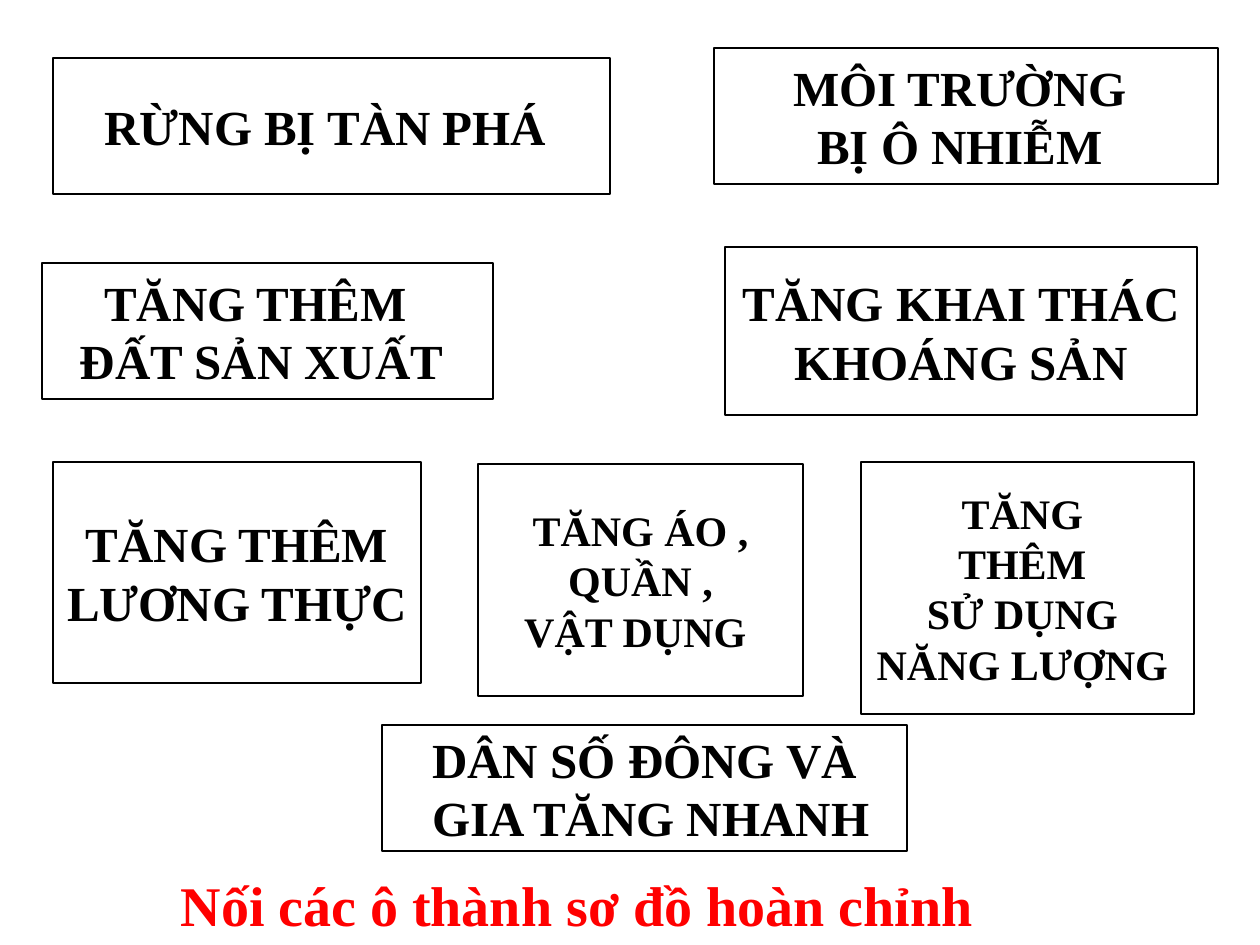
from pptx import Presentation
from pptx.dml.color import RGBColor
from pptx.enum.shapes import MSO_SHAPE as Shape
from pptx.enum.text import MSO_ANCHOR as Anchor, MSO_AUTO_SIZE as Auto, PP_ALIGN as Align
from pptx.util import Pt

BLACK = RGBColor(0, 0, 0)
RED = RGBColor(255, 0, 0)
FONT = "Times New Roman"
PAD = 13  # side inset of a box

# left, top, width, height in px; text size; extra right inset in px; lines
BOXES = [
    (53, 462, 368, 221, 28, 0, ["TĂNG THÊM", " LƯƠNG THỰC "]),
    (478, 464, 325, 232, 24, 0, ["TĂNG ÁO ,", "QUẦN ,", "VẬT DỤNG "]),
    (861, 462, 333, 252, 24, 0, ["TĂNG ", "THÊM ", "SỬ DỤNG ", "NĂNG LƯỢNG "]),
    (382, 725, 525, 126, 28, 0, ["DÂN SỐ ĐÔNG VÀ", " GIA TĂNG NHANH"]),
    (42, 263, 451, 136, 28, 12, ["TĂNG THÊM ", "ĐẤT SẢN XUẤT"]),
    (725, 247, 472, 168, 28, 0, ["TĂNG KHAI THÁC", " KHOÁNG SẢN "]),
    (53, 58, 557, 136, 28, 0, ["RỪNG BỊ TÀN PHÁ "]),
    (714, 48, 504, 136, 28, 0, ["MÔI TRƯỜNG ", "BỊ Ô NHIỄM "]),
]
TASK = (10, 864, 1134, 81, 32, "Nối các ô thành sơ đồ hoàn chỉnh")


def px(n):
    return round(n * 914400 / 126)


def write(frame, text, size, color):
    frame.text = text
    for para in frame.paragraphs:
        para.alignment = Align.CENTER
        for run in para.runs:
            font = run.font
            font.name, font.size, font.bold = FONT, Pt(size), True
            font.color.rgb = color


deck = Presentation()
deck.slide_width, deck.slide_height = px(1260), px(945)
slide = deck.slides.add_slide(deck.slide_layouts[6])

# Boxes to be joined
for *rect, size, extra, lines in BOXES:
    box = slide.shapes.add_shape(Shape.RECTANGLE, *map(px, rect))
    box.shadow.inherit = False
    box.fill.background()
    box.line.color.rgb = BLACK
    box.line.width = Pt(0.75)
    frame = box.text_frame
    frame.word_wrap = False
    frame.vertical_anchor = Anchor.MIDDLE
    frame.margin_left, frame.margin_right = px(PAD), px(PAD + extra)
    write(frame, "\n".join(lines), size, BLACK)

# Task line
*rect, size, text = TASK
task = slide.shapes.add_textbox(*map(px, rect))
frame = task.text_frame
frame.word_wrap = True
frame.auto_size = Auto.SHAPE_TO_FIT_TEXT
write(frame, text, size, RED)

deck.save("out.pptx")
